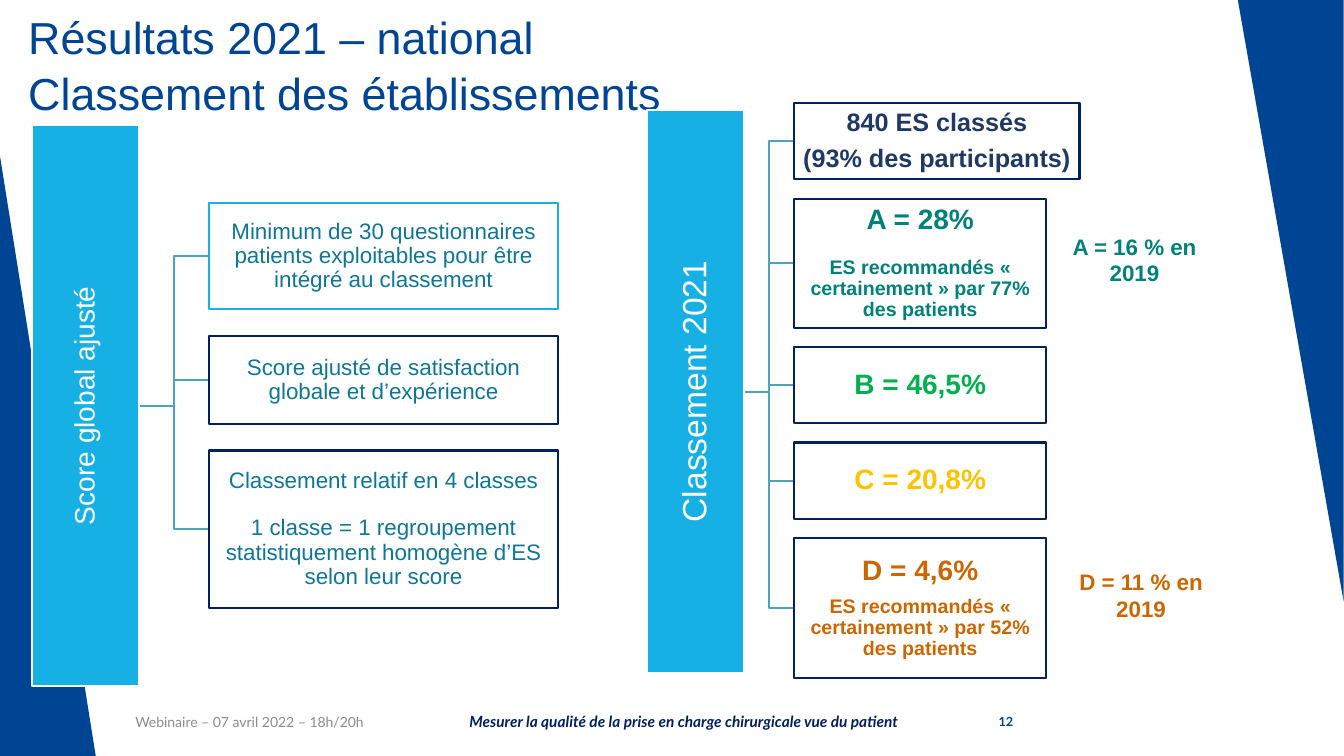
"""Build the slide that presents the 2021 national ranking of hospitals."""
from dataclasses import dataclass
from typing import Optional

from pptx import Presentation
from pptx import util as u
from pptx.dml.color import RGBColor
from pptx.enum import shapes, text


@dataclass(frozen=True)
class Theme:
    """Colours, fonts and type sizes of the slide."""
    brand: str = "004494"
    navy: str = "002060"
    heading: str = "203864"
    sky: str = "17B0E4"
    branch: str = "4CA3BF"
    body: str = "0F7698"
    white: str = "FFFFFF"
    grey: str = "8C8C8C"
    class_a: str = "00827A"
    class_b: str = "00B050"
    class_c: str = "FDC300"
    class_d: str = "CC6600"
    sans: str = "Arial"
    footer: str = "Lato"
    title_size: float = 32
    bar_size: float = 24
    grade_size: float = 20
    count_size: float = 18
    body_size: float = 16
    detail_size: float = 14
    line: float = 1.5


THEME = Theme()


@dataclass(frozen=True)
class Line:
    """A paragraph with its type settings."""
    words: str
    size: float
    color: str
    bold: bool = False
    italic: bool = False
    font: str = THEME.sans
    before: float = 0
    align: text.PP_ALIGN = text.PP_ALIGN.CENTER


@dataclass(frozen=True)
class Area:
    """A rectangle counted in columns and rows of a tenth of an inch."""
    left: float
    top: float
    width: float
    height: float

    def lengths(self) -> tuple:
        """Return the rectangle as slide lengths."""
        return tuple(map(cells, (self.left, self.top, self.width, self.height)))


@dataclass(frozen=True)
class Box:
    """An outlined box of a branch."""
    width: float
    height: float
    lines: tuple[Line, ...]
    outline: str = THEME.navy


@dataclass(frozen=True)
class Tree:
    """A vertical bar and the boxes that branch from it."""
    bar: Area
    label: Line
    left: float
    top: float
    gap: float
    boxes: tuple[Box, ...]


@dataclass(frozen=True)
class Label:
    """A free text on the slide."""
    area: Area
    line: Line
    anchor: text.MSO_ANCHOR = text.MSO_ANCHOR.MIDDLE


def cells(count: float) -> u.Length:
    """Turn a count of grid cells into a length."""
    return u.Inches(count / 10)


def body(words: str, before: float = 0) -> Line:
    """Return a line of explanatory text."""
    return Line(words, THEME.body_size, THEME.body, before=before)


def grade(words: str, color: str) -> Line:
    """Return the share of a class."""
    return Line(words, THEME.grade_size, color, True)


def patients(share: str, color: str, before: float) -> Line:
    """Return the share of patients who recommend a class."""
    words = f"ES recommandés «\u00a0certainement\u00a0» par {share} des patients".replace("\u00a0", " ")
    return Line(words, THEME.detail_size, color, True, before=before)


def write(frame, lines: tuple[Line, ...], spacing: float = 1) -> None:
    """Fill a text frame with formatted paragraphs."""
    frame.word_wrap = True
    for index, line in enumerate(lines):
        para = frame.add_paragraph() if index else frame.paragraphs[0]
        para.text = line.words
        para.alignment, para.line_spacing = line.align, spacing
        para.space_before, para.space_after = u.Pt(line.before), u.Pt(0)
        font = para.font
        font.name, font.size = line.font, u.Pt(line.size)
        font.bold, font.italic = line.bold, line.italic
        font.color.rgb = RGBColor.from_string(line.color)


def paint(shape, fill: Optional[str], outline: Optional[str]) -> None:
    """Set the fill and outline of a shape and drop its shadow."""
    shape.shadow.inherit = False
    if fill:
        shape.fill.solid()
        shape.fill.fore_color.rgb = RGBColor.from_string(fill)
    else:
        shape.fill.background()
    if outline:
        shape.line.color.rgb = RGBColor.from_string(outline)
        shape.line.width = u.Pt(THEME.line)
    else:
        shape.line.fill.background()


def draw_box(page, area: Area, lines: tuple[Line, ...], fill: Optional[str], outline: str):
    """Draw a rectangle that holds centred text."""
    box = page.shapes.add_shape(shapes.MSO_SHAPE.RECTANGLE, *area.lengths())
    paint(box, fill, outline)
    frame = box.text_frame
    frame.margin_left = frame.margin_right = frame.margin_top = frame.margin_bottom = cells(0.1)
    frame.vertical_anchor = text.MSO_ANCHOR.MIDDLE
    write(frame, lines, 0.9)
    return box


def draw_branch(page, start: tuple[float, float], end: tuple[float, float]) -> None:
    """Draw an angled line from a bar to a box."""
    bend = (start[0] + end[0]) / 2
    builder = page.shapes.build_freeform(*map(cells, start))
    corners = ((bend, start[1]), (bend, end[1]), end)
    builder.add_line_segments([tuple(map(cells, corner)) for corner in corners], close=False)
    paint(builder.convert_to_shape(), None, THEME.branch)


def draw_tree(page, tree: Tree) -> None:
    """Draw a bar turned upwards, its branches and its boxes."""
    bar, top = tree.bar, tree.top
    center, middle = bar.left + bar.width / 2, bar.top + bar.height / 2
    for box in tree.boxes:
        draw_branch(page, (bar.left + bar.width, middle), (tree.left, top + box.height / 2))
        draw_box(page, Area(tree.left, top, box.width, box.height), box.lines, None, box.outline)
        top += box.height + tree.gap
    lying = Area(center - bar.height / 2, middle - bar.width / 2, bar.height, bar.width)
    draw_box(page, lying, (tree.label,), THEME.sky, THEME.white).rotation = 270


def draw_label(page, label: Label) -> None:
    """Draw a free text."""
    frame = page.shapes.add_textbox(*label.area.lengths()).text_frame
    frame.vertical_anchor = label.anchor
    write(frame, (label.line,))


SCORE = Tree(
    Area(3.2, 12.4, 10.6, 55.7), Line("Score global ajusté", THEME.grade_size, THEME.white), 20.7, 20.1, 2.6,
    (Box(34.7, 10.6, (body("Minimum de 30 questionnaires patients exploitables pour être intégré au classement"),),
         THEME.sky),
     Box(34.7, 8.8, (body("Score ajusté de satisfaction globale et d’expérience"),)),
     Box(34.7, 15.6, (body("Classement relatif en 4 classes"),
                      body("1 classe = 1 regroupement statistiquement homogène d’ES selon leur score", 16.5)))))
RANKING = Tree(
    Area(64.2, 10.9, 9.6, 55.9), Line("Classement 2021", THEME.bar_size, THEME.white), 78.8, 10.2, 1.9,
    (Box(28.3, 7.6, (Line("840 ES classés", THEME.count_size, THEME.heading, True),
                     Line("(93% des participants)", THEME.count_size, THEME.heading, True, before=6.5))),
     Box(25, 12.8, (grade("A = 28%", THEME.class_a), patients("77%", THEME.class_a, 16))),
     Box(25, 7.6, (grade("B = 46,5%", THEME.class_b),)),
     Box(25, 7.6, (grade("C = 20,8%", THEME.class_c),)),
     Box(25, 13.9, (grade("D = 4,6%", THEME.class_d), patients("52%", THEME.class_d, 7)))))
LABELS = (
    Label(Area(94, 69.6, 7.5, 4), Line("12", 9, THEME.brand, True, font=THEME.footer, align=text.PP_ALIGN.RIGHT)),
    Label(Area(41.6, 69.6, 52.5, 4), Line("Mesurer la qualité de la prise en charge chirurgicale vue du patient",
                                          11, THEME.navy, True, True, THEME.footer)),
    Label(Area(10.3, 69.6, 28.9, 4), Line("Webinaire – 07 avril 2022 – 18h/20h", 10, THEME.grey, font=THEME.footer)),
    Label(Area(104.5, 22.6, 16.1, 6.4), Line("A = 16 % en 2019", THEME.body_size, THEME.class_a, True),
          text.MSO_ANCHOR.TOP),
    Label(Area(104.5, 55.9, 17.4, 6.4), Line("D = 11 % en 2019", THEME.body_size, THEME.class_d, True),
          text.MSO_ANCHOR.TOP))
CORNERS = ((Area(0, 15.5, 9.5, 59.5), 0), (Area(122.8, 0, 10.5, 59.7), 180))


def main() -> None:
    """Build and save the deck."""
    deck = Presentation()
    deck.slide_width, deck.slide_height = cells(133.33), cells(75)
    page = deck.slides.add_slide(deck.slide_layouts[5])
    title = page.shapes.title
    title.left, title.top, title.width, title.height = Area(1.8, 0.2, 94, 14.4).lengths()
    title.text_frame.vertical_anchor = text.MSO_ANCHOR.TOP
    write(title.text_frame, (Line("Résultats 2021 – national\vClassement des établissements",
                                  THEME.title_size, THEME.brand, align=text.PP_ALIGN.LEFT),), 1.05)
    for area, turn in CORNERS:
        corner = page.shapes.add_shape(shapes.MSO_SHAPE.RIGHT_TRIANGLE, *area.lengths())
        corner.rotation = turn
        paint(corner, THEME.brand, None)
    for tree in (SCORE, RANKING):
        draw_tree(page, tree)
    for label in LABELS:
        draw_label(page, label)
    deck.save("out.pptx")


if __name__ == "__main__":
    main()
